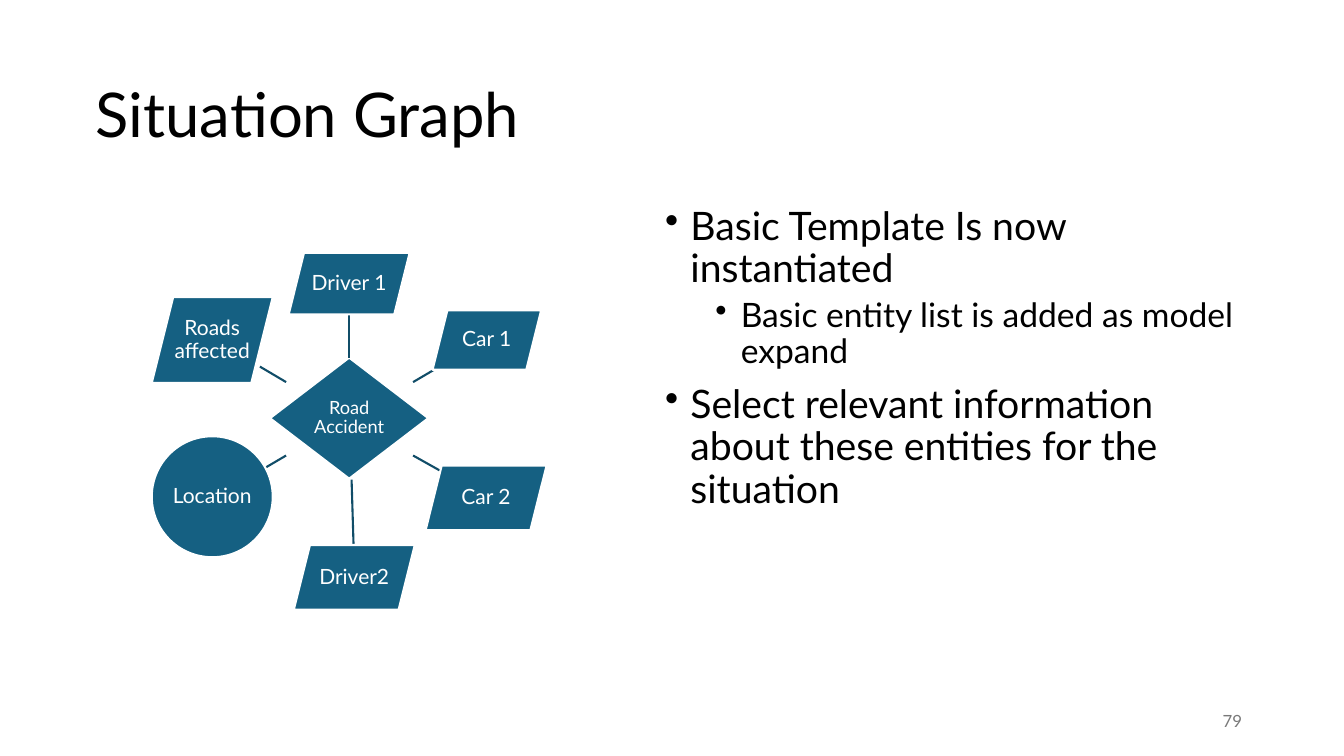
from lxml.etree import SubElement
from pptx import Presentation
from pptx.dml.color import RGBColor
from pptx.enum.shapes import MSO_CONNECTOR, MSO_SHAPE
from pptx.enum.text import MSO_ANCHOR as Anchor, PP_ALIGN as Align
from pptx.oxml.ns import qn
from pptx.util import Cm, Pt

FONT = "Lato"
COLORS = {"node": "156082", "spoke": "114D68", "white": "FFFFFF",
          "text": "000000", "number": "797979"}
SLANTED = MSO_SHAPE.PARALLELOGRAM
ENTITIES = [
    ("Driver 1", SLANTED, (0, -3.39), (3.05, 1.55), (0, -1.52), (0, -2.62)),
    ("Car 1", SLANTED, (3.47, -1.97), (2.74, 1.5), (1.61, -0.91), (2.53, -1.45)),
    ("Car 2", SLANTED, (3.45, 2.01), (3.05, 1.63), (1.61, 0.94), (2.43, 1.4)),
    ("Driver2", SLANTED, (0.13, 4.01), (3.05, 1.63), (0.06, 1.55), (0.11, 3.2)),
    ("Location", MSO_SHAPE.OVAL, (-3.45, 1.98), (3.05, 3.05), (-1.59, 0.94), (-2.1, 1.24)),
    ("Roads affected", SLANTED, (-3.45, -1.97), (3.05, 2.16), (-1.59, -0.91), (-2.25, -1.3)),
]
POINTS = [
    (0, "Basic Template Is now instantiated"),
    (1, "Basic entity list is added as model expand"),
    (0, "Select relevant information about these entities for the situation"),
]


def color(name):
    """Return the named colour."""
    return RGBColor.from_string(COLORS[name])


def style(paragraph, text, size, ink="text", align=Align.LEFT, spacing=0.9):
    """Fill a paragraph and set its font and layout."""
    paragraph.text = text
    paragraph.alignment = align
    paragraph.line_spacing = spacing
    paragraph.font.name = FONT
    paragraph.font.size = Pt(size)
    paragraph.font.color.rgb = color(ink)


def add_frame(slide, box, anchor):
    """Add a wrapping text box and return its text frame."""
    frame = slide.shapes.add_textbox(*map(Cm, box)).text_frame
    frame.word_wrap = True
    frame.vertical_anchor = anchor
    return frame


def add_node(slide, kind, center, size, label, text_size):
    """Add a labelled node around its centre."""
    (x, y), (width, height) = center, size
    node = slide.shapes.add_shape(kind, Cm(x - width / 2), Cm(y - height / 2),
                                  Cm(width), Cm(height))
    node.shadow.inherit = False
    node.fill.solid()
    node.fill.fore_color.rgb = color("node")
    node.line.color.rgb = color("white")
    node.line.width = Pt(1.5)
    frame = node.text_frame
    frame.word_wrap = True
    frame.vertical_anchor = Anchor.MIDDLE
    frame.margin_left = frame.margin_right = Cm(0.03)
    frame.margin_top = frame.margin_bottom = Cm(0.03)
    style(frame.paragraphs[0], label, text_size, "white", Align.CENTER)


def add_spoke(slide, start, end):
    """Add a line between the hub and an entity."""
    spoke = slide.shapes.add_connector(MSO_CONNECTOR.STRAIGHT, *map(Cm, start + end))
    spoke.line.color.rgb = color("spoke")
    spoke.line.width = Pt(1.5)
    SubElement(spoke._element.spPr, qn("a:effectLst"))


def add_graph(slide, box):
    """Draw the hub and its entities in the box."""
    left, top, width, height = box
    hub_x, hub_y = left + width / 2, top + height * 0.46

    def place(offset):
        """Turn an offset from the hub into a slide position."""
        return hub_x + offset[0], hub_y + offset[1]

    add_node(slide, MSO_SHAPE.DIAMOND, place((0, 0)), (3.99, 3.05), "Road Accident", 13)
    for label, kind, offset, size, start, end in ENTITIES:
        add_spoke(slide, place(start), place(end))
        add_node(slide, kind, place(offset), size, label, 15)


def add_title(slide, box):
    """Write the slide title in the box."""
    style(add_frame(slide, box, Anchor.MIDDLE).paragraphs[0], "Situation Graph", 44)


def add_points(slide, box):
    """Write the two-level bullet list in the box."""
    frame = add_frame(slide, box, Anchor.TOP)
    for index, (level, text) in enumerate(POINTS):
        point = frame.add_paragraph() if index else frame.paragraphs[0]
        style(point, text, 24 if level else 28)
        point.level = level
        point.space_before = Pt(5 if level else 10)
        properties = point._p.get_or_add_pPr()
        properties.set("marL", str(Cm(0.64 + 1.27 * level)))
        properties.set("indent", str(-Cm(0.64)))
        bullet_font = properties.find(qn("a:defRPr"))
        bullet = SubElement(properties, qn("a:buChar"), char="•")
        if bullet_font is not None:
            bullet_font.addprevious(bullet)


def add_number(slide, box):
    """Write the slide number in the box."""
    style(add_frame(slide, box, Anchor.MIDDLE).paragraphs[0], "79", 12,
          "number", Align.RIGHT, 1.0)


def main():
    """Build and save the slide."""
    deck = Presentation()
    deck.slide_width, deck.slide_height = Cm(33.87), Cm(19.05)
    slide = deck.slides.add_slide(deck.slide_layouts[6])
    add_graph(slide, (3.84, 6.38, 9.92, 9.04))
    add_title(slide, (2.16, 1.12, 29.21, 3.68))
    add_points(slide, (16.51, 5.08, 15.04, 12.09))
    add_number(slide, (23.93, 17.65, 7.62, 1.02))
    deck.save("out.pptx")


if __name__ == "__main__":
    main()
